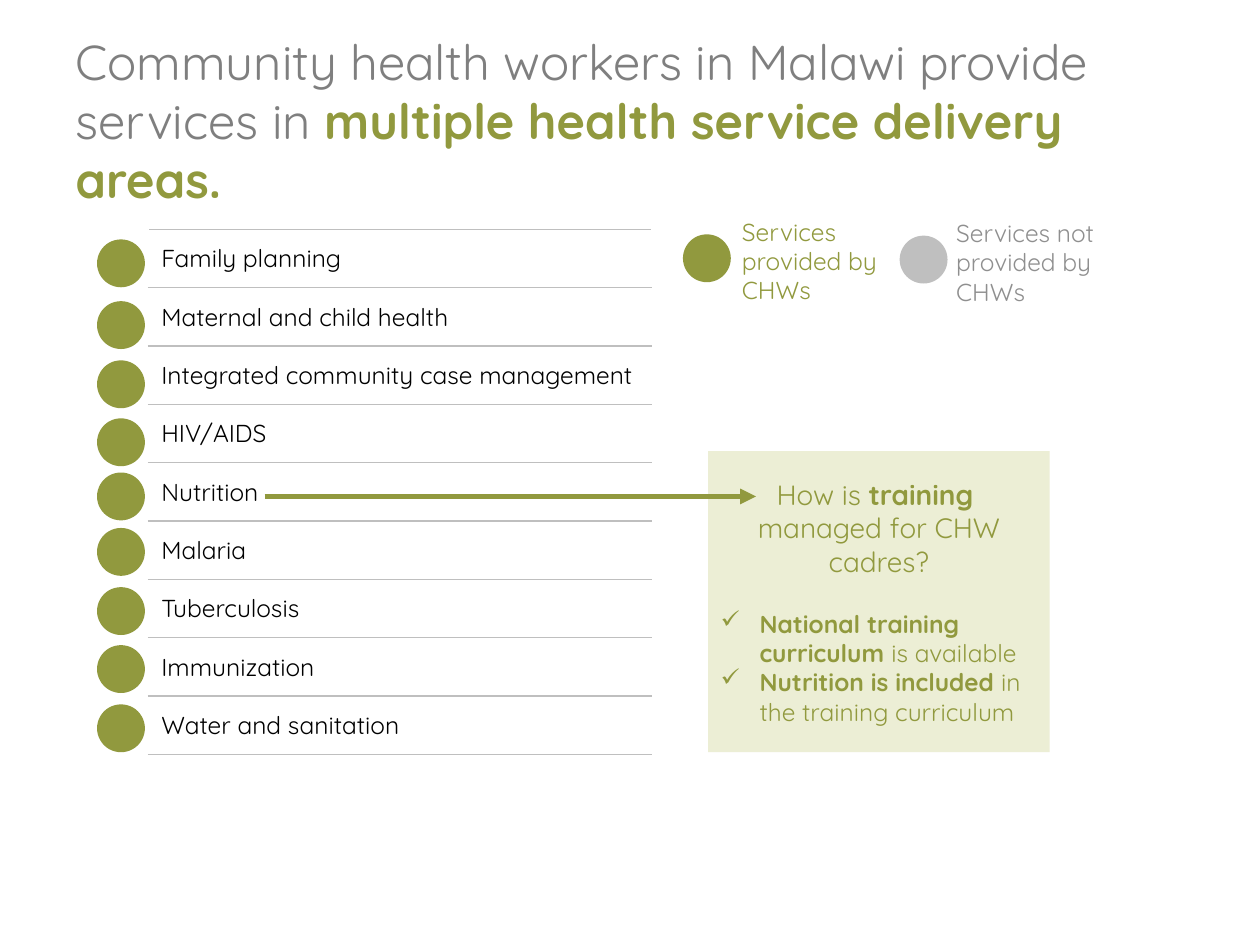
from pptx import Presentation
from pptx.util import Inches, Pt
from pptx.dml.color import RGBColor as RGB
from pptx.enum.shapes import MSO_SHAPE as Shape, MSO_CONNECTOR as Conn
from pptx.enum.text import MSO_ANCHOR as Anchor, PP_ALIGN as Align
from lxml.etree import SubElement as Sub
from pptx.oxml.ns import qn

FONT = "Quicksand"
HUES = {"green": "91993E", "pale": "ECEED5", "title": "7F7F7F",
        "gray": "BFBFBF", "label": "8F8F8F", "black": "000000"}


def add_run(par, text, size, hue, bold=False):
    run = par.add_run()
    run.text = text
    run.font.name = FONT
    run.font.size = Pt(size)
    run.font.bold = bold
    run.font.color.rgb = RGB.from_string(HUES[hue])


def add_fill(kind, left, top, width, height, hue):
    shape = slide.shapes.add_shape(
        kind, Inches(left), Inches(top), Inches(width), Inches(height))
    shape.shadow.inherit = False
    shape.fill.solid()
    shape.fill.fore_color.rgb = RGB.from_string(HUES[hue])
    shape.line.fill.background()
    return shape


deck = Presentation()
deck.slide_width, deck.slide_height = Inches(10), Inches(7.5)
slide = deck.slides.add_slide(deck.slide_layouts[5])

# Title
title = slide.shapes.title
title.left, title.top = Inches(0.5), Inches(0.33)
title.width, title.height = Inches(8.67), Inches(1.24)
title.text_frame.vertical_anchor = Anchor.MIDDLE
par = title.text_frame.paragraphs[0]
par.alignment = Align.LEFT
add_run(par, "Community health workers in Malawi provide services in ", 28, "title")
add_run(par, "multiple health service delivery areas.", 28, "green", True)

# Service table, ruled above and below each name
areas = ["Family planning", "Maternal and child health",
         "Integrated community case management", "HIV/AIDS", "Nutrition",
         "Malaria", "Tuberculosis", "Immunization", "Water and sanitation"]
frame = slide.shapes.add_table(len(areas), 2, Inches(0.67), Inches(1.82),
                               Inches(4.5), Inches(4.17))
table = frame.table
table.first_row = table.horz_banding = False
table.columns[0].width, table.columns[1].width = Inches(0.51), Inches(3.99)
for row, area in enumerate(areas):
    mark, name = table.cell(row, 0), table.cell(row, 1)
    name.vertical_anchor = Anchor.MIDDLE
    add_run(name.text_frame.paragraphs[0], area, 14, "black")
    props = name._tc.get_or_add_tcPr()
    for side in ("a:lnT", "a:lnB"):
        rule = Sub(props, qn(side), w=str(Pt(1)))
        Sub(Sub(rule, qn("a:solidFill")), qn("a:srgbClr"), val=HUES["gray"])
    for cell in (mark, name):
        cell.fill.background()

# Status dots, one per service
for top in (1.9, 2.39, 2.86, 3.32, 3.75, 4.19, 4.66, 5.12, 5.59):
    add_fill(Shape.OVAL, 0.77, top, 0.38, 0.38, "green")

# Legend
for left, top, dot, start, base, text, hue in (
        (5.42, 1.86, "green", 5.79, 1.67, "Services provided by CHWs", "green"),
        (7.14, 1.87, "gray", 7.49, 1.68, "Services not provided by CHWs", "label")):
    add_fill(Shape.OVAL, left, top, 0.38, 0.38, dot)
    box = slide.shapes.add_textbox(Inches(start), Inches(base),
                                   Inches(1.35), Inches(0.81))
    box.text_frame.word_wrap = True
    add_run(box.text_frame.paragraphs[0], text, 14, hue)

# Training panel
panel = add_fill(Shape.RECTANGLE, 5.62, 3.58, 2.71, 2.39, "pale")
body = panel.text_frame
body.word_wrap = True
body.vertical_anchor = Anchor.MIDDLE
par = body.paragraphs[0]
par.alignment = Align.CENTER
add_run(par, "How is ", 16, "green")
add_run(par, "training ", 16, "green", True)
par = body.add_paragraph()
par.alignment = Align.CENTER
par.space_after = Pt(17.5)
add_run(par, "managed for CHW cadres?", 16, "green")
for strong, rest in (("National training curriculum ", "is available"),
                     ("Nutrition is included", " in the training curriculum")):
    par = body.add_paragraph()
    par.alignment = Align.LEFT
    props = par._p.get_or_add_pPr()
    props.set("marL", str(Inches(0.31)))
    props.set("indent", str(-Inches(0.31)))
    Sub(props, qn("a:buChar"), char="✓")
    add_run(par, strong, 14, "green", True)
    add_run(par, rest, 14, "green")

# Arrow from Nutrition to the panel
arrow = slide.shapes.add_connector(Conn.STRAIGHT, Inches(2.1), Inches(3.94),
                                   Inches(6), Inches(3.94))
arrow.line.width = Pt(3)
arrow.line.color.rgb = RGB.from_string(HUES["green"])
Sub(arrow.line._get_or_add_ln(), qn("a:tailEnd"), type="triangle")
Sub(arrow._element.spPr, qn("a:effectLst"))

deck.save("out.pptx")
